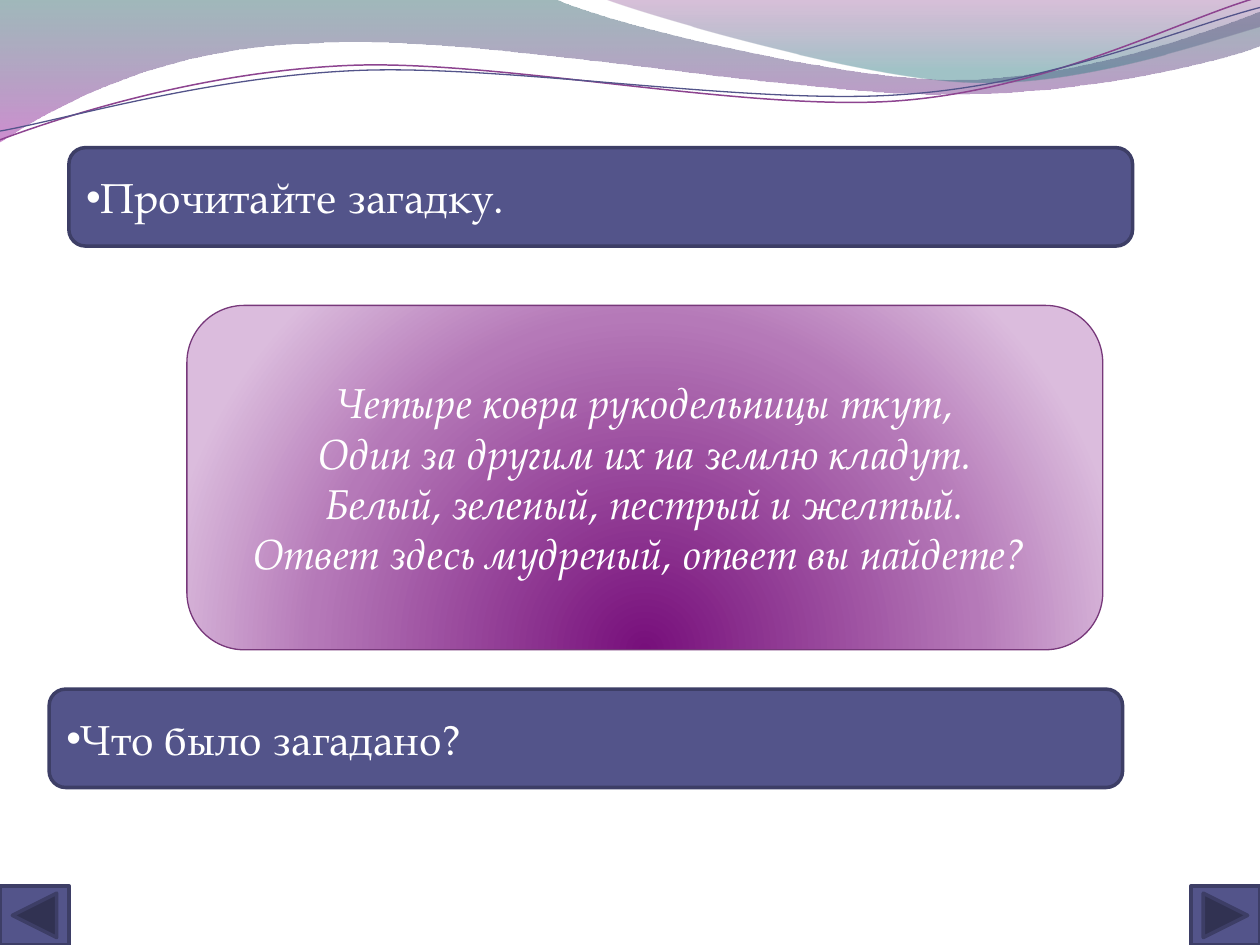
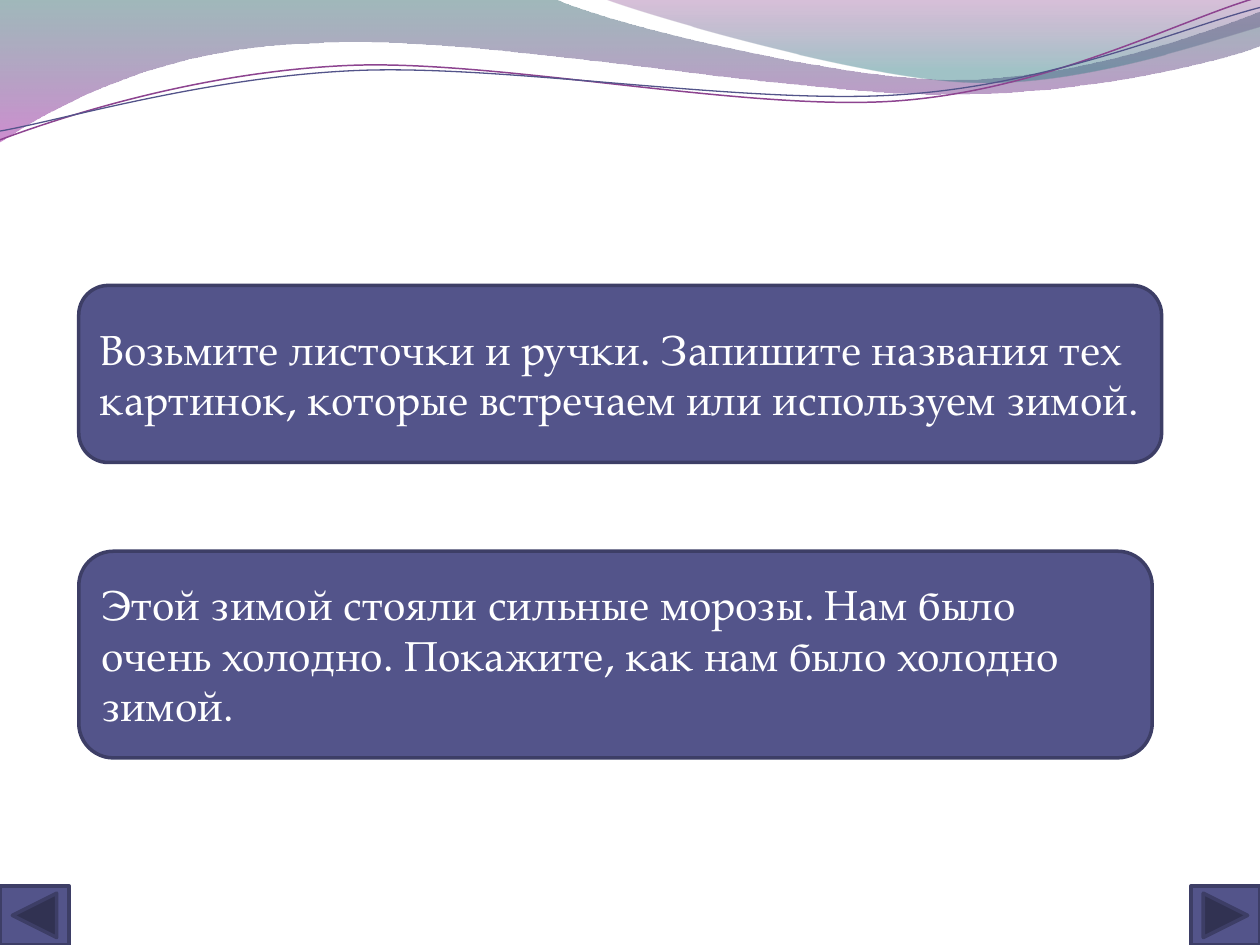
import math
from dataclasses import dataclass
from typing import Optional

import pptx
import pptx.dml.color
import pptx.enum.shapes
import pptx.enum.text
import pptx.oxml.ns
import pptx.util
from lxml import etree

Pt = pptx.util.Pt
RGBColor = pptx.dml.color.RGBColor
SHAPE = pptx.enum.shapes.MSO_SHAPE
ALIGN = pptx.enum.text.PP_ALIGN
qn = pptx.oxml.ns.qn

WHITE = RGBColor(0xFF, 0xFF, 0xFF)
INDIGO = RGBColor(0x53, 0x54, 0x8A)
DARK_INDIGO = RGBColor(0x3D, 0x3E, 0x66)
PURPLE = RGBColor(0x8D, 0x44, 0x90)
TEAL = RGBColor(0x2D, 0x63, 0x68)
MAGENTA = RGBColor(0xA5, 0x30, 0xA9)
PLUM = RGBColor(0x7F, 0x2F, 0x82)
SEA = RGBColor(0x2F, 0x7B, 0x82)
VIOLET = RGBColor(0x77, 0x0F, 0x7B)
ORCHID = RGBColor(0xB5, 0x79, 0xB8)
LILAC = RGBColor(0xDB, 0xBC, 0xDD)
RIDDLE_EDGE = RGBColor(0x77, 0x38, 0x7A)

FONT = "TeX Gyre Pagella"
BULLET_FONT = "Arial"
SLIDE_WIDTH, SLIDE_HEIGHT = 720, 540
NAV_WIDTH, NAV_HEIGHT = 39.5, 33.8
WAVE_TILT = -2.7


@dataclass(frozen=True)
class Stop:
    position: int
    color: RGBColor
    opacity: int = 100


@dataclass(frozen=True)
class Wave:
    start: tuple
    segments: tuple
    stops: tuple = ()
    line: Optional[RGBColor] = None
    width: float = 0.75
    pivot: Optional[tuple] = None


@dataclass(frozen=True)
class Panel:
    left: float
    top: float
    width: float
    height: float
    text: str = ""
    bullet: bool = False
    kind: SHAPE = SHAPE.ROUNDED_RECTANGLE


WAVES = (
    Wave(
        (0, 0),
        (
            ((316.8, -0.7),),
            ((342.7, 12.2), (478.1, 45.4), (545.8, 45.4)),
            ((614.2, 45.4), (689.8, 18.7), (720, 6.5)),
            ((720.7, 25.9),),
            ((707.8, 31.7), (626.4, 54.7), (537.1, 54)),
            ((447.8, 54), (275, 20.2), (185, 24.5)),
            ((92.9, 25.9), (33.1, 59.8), (-0.7, 81.4)),
        ),
        stops=(Stop(0, TEAL, 45), Stop(100, MAGENTA, 55)),
    ),
    Wave(
        (344.9, -0.7),
        (
            ((366.5, 7.9), (491, 44.6), (553.7, 46.8)),
            ((616.3, 49.7), (691.9, 23), (720, 15.1)),
            ((720, 0),),
        ),
        stops=(Stop(0, PLUM, 30), Stop(80, SEA, 45)),
    ),
    Wave(
        (0, 79.9),
        (
            ((34.6, 67), (113.8, 41), (199.4, 37.4)),
            ((284.4, 33.8), (427, 64.1), (513.4, 57.6)),
            ((599.8, 51.1), (675.4, 10.8), (718.6, -1.4)),
        ),
        line=PURPLE,
        width=0.85,
        pivot=(359.3, 41.4),
    ),
    Wave(
        (0, 74.9),
        (
            ((33.8, 69.1), (118.1, 43.9), (203.8, 40.3)),
            ((290.2, 36.7), (429.8, 60.5), (516.2, 54)),
            ((601.9, 48.2), (677.5, 15.1), (720, 4.3)),
        ),
        line=INDIGO,
        pivot=(359.6, 42.5),
    ),
)

NAV_TOP = SLIDE_HEIGHT - NAV_HEIGHT
NAV_BUTTONS = (
    Panel(SLIDE_WIDTH - NAV_WIDTH, NAV_TOP, NAV_WIDTH, NAV_HEIGHT,
          kind=SHAPE.ACTION_BUTTON_FORWARD_OR_NEXT),
    Panel(0, NAV_TOP, NAV_WIDTH, NAV_HEIGHT,
          kind=SHAPE.ACTION_BUTTON_BACK_OR_PREVIOUS),
)

RIDDLE = Panel(
    106.8, 174.5, 523.4, 196.8,
    "Четыре ковра рукодельницы ткут,\n"
    "Один за другим их на землю кладут.\n"
    "Белый, зеленый, пестрый и желтый.\n"
    "Ответ здесь мудреный, ответ вы найдете? ",
)
RIDDLE_TASKS = (
    Panel(39.4, 84.4, 607.8, 56.2, "Прочитайте загадку.", bullet=True),
    Panel(28.1, 393.8, 613.4, 56.2, "Что было загадано?", bullet=True),
)
WINTER_TASKS = (
    Panel(45, 163.1, 618.8, 101.2,
          "Возьмите листочки и ручки. Запишите названия тех картинок, "
          "которые встречаем или используем зимой."),
    Panel(45, 315, 613.4, 118.1,
          "Этой зимой стояли сильные морозы. Нам было очень холодно. "
          "Покажите, как нам было холодно зимой."),
)


def add_color(parent, color: RGBColor, opacity: int) -> None:
    node = etree.SubElement(parent, qn("a:srgbClr"), val=str(color))
    if opacity < 100:
        etree.SubElement(node, qn("a:alpha"), val=str(opacity * 1000))


def fill_gradient(shape, stops: tuple, radial: bool = False) -> None:
    shape.fill.gradient()
    gradient = shape._element.spPr.find(qn("a:gradFill"))
    gradient.clear()
    gradient.set("rotWithShape", "1")
    stop_list = etree.SubElement(gradient, qn("a:gsLst"))
    for stop in stops:
        node = etree.SubElement(stop_list, qn("a:gs"), pos=str(stop.position * 1000))
        add_color(node, stop.color, stop.opacity)
    if radial:
        focus = etree.SubElement(gradient, qn("a:path"), path="circle")
        etree.SubElement(focus, qn("a:fillToRect"),
                         l="50000", t="130000", r="50000", b="-30000")
    else:
        etree.SubElement(gradient, qn("a:lin"), ang="5400000", scaled="0")


def set_line(shape, color: RGBColor, width: float) -> None:
    shape.line.color.rgb = color
    shape.line.width = Pt(width)


def turn(point: tuple, pivot: tuple, degrees: float) -> tuple:
    angle = math.radians(degrees)
    dx, dy = point[0] - pivot[0], point[1] - pivot[1]
    return (pivot[0] + dx * math.cos(angle) - dy * math.sin(angle),
            pivot[1] + dx * math.sin(angle) + dy * math.cos(angle))


def bend_segments(shape, segments: tuple) -> None:
    legs = iter(list(shape._element.iter(qn("a:lnTo"))))
    for segment in segments:
        first, *others = [next(legs) for _ in segment]
        if others:
            curve = etree.Element(qn("a:cubicBezTo"))
            first.addprevious(curve)
            for leg in (first, *others):
                curve.append(leg[0])
                leg.getparent().remove(leg)


def draw_wave(slide, wave: Wave) -> None:
    points = [wave.start, *(point for segment in wave.segments for point in segment)]
    if wave.pivot:
        points = [turn(point, wave.pivot, -WAVE_TILT) for point in points]
    outline = [(Pt(x), Pt(y)) for x, y in points]
    builder = slide.shapes.build_freeform(*outline[0])
    builder.add_line_segments(outline[1:], close=bool(wave.stops))
    shape = builder.convert_to_shape()
    bend_segments(shape, wave.segments)
    shape.shadow.inherit = False
    if wave.pivot:
        shape.rotation = WAVE_TILT
    if wave.stops:
        fill_gradient(shape, wave.stops)
        shape.line.fill.background()
    else:
        shape.fill.background()
        set_line(shape, wave.line, wave.width)


def write_text(shape, text: str, *, size: float = 24, color: RGBColor = WHITE,
               italic: bool = False, align: ALIGN = ALIGN.LEFT,
               bullet: bool = False) -> None:
    frame = shape.text_frame
    frame.word_wrap = True
    frame.vertical_anchor = pptx.enum.text.MSO_ANCHOR.MIDDLE
    paragraph = frame.paragraphs[0]
    paragraph.alignment = align
    for index, line in enumerate(text.split("\n")):
        if index:
            paragraph.add_line_break()
        run = paragraph.add_run()
        run.text = line
        run.font.name = FONT
        run.font.size = Pt(size)
        run.font.italic = italic
        run.font.color.rgb = color
    if bullet:
        properties = paragraph._p.get_or_add_pPr()
        etree.SubElement(properties, qn("a:buFont"), typeface=BULLET_FONT)
        etree.SubElement(properties, qn("a:buChar"), char="•")


def draw_panel(slide, panel: Panel):
    shape = slide.shapes.add_shape(
        panel.kind, Pt(panel.left), Pt(panel.top), Pt(panel.width), Pt(panel.height))
    shape.shadow.inherit = False
    shape.fill.solid()
    shape.fill.fore_color.rgb = INDIGO
    set_line(shape, DARK_INDIGO, 2)
    return shape


def draw_task(slide, task: Panel) -> None:
    write_text(draw_panel(slide, task), task.text, bullet=task.bullet)


def draw_riddle(slide, riddle: Panel) -> None:
    shape = draw_panel(slide, riddle)
    fill_gradient(shape, (Stop(0, VIOLET), Stop(68, ORCHID), Stop(100, LILAC)),
                  radial=True)
    set_line(shape, RIDDLE_EDGE, 0.75)
    write_text(shape, riddle.text, italic=True, align=ALIGN.CENTER)


def add_slide(deck):
    slide = deck.slides.add_slide(deck.slide_layouts[6])
    for wave in WAVES:
        draw_wave(slide, wave)
    for button in NAV_BUTTONS:
        draw_panel(slide, button)
    return slide


def main() -> None:
    deck = pptx.Presentation()
    deck.slide_width, deck.slide_height = Pt(SLIDE_WIDTH), Pt(SLIDE_HEIGHT)

    riddle_slide = add_slide(deck)
    draw_riddle(riddle_slide, RIDDLE)
    for task in RIDDLE_TASKS:
        draw_task(riddle_slide, task)

    winter_slide = add_slide(deck)
    for task in WINTER_TASKS:
        draw_task(winter_slide, task)

    deck.save("out.pptx")


if __name__ == "__main__":
    main()
